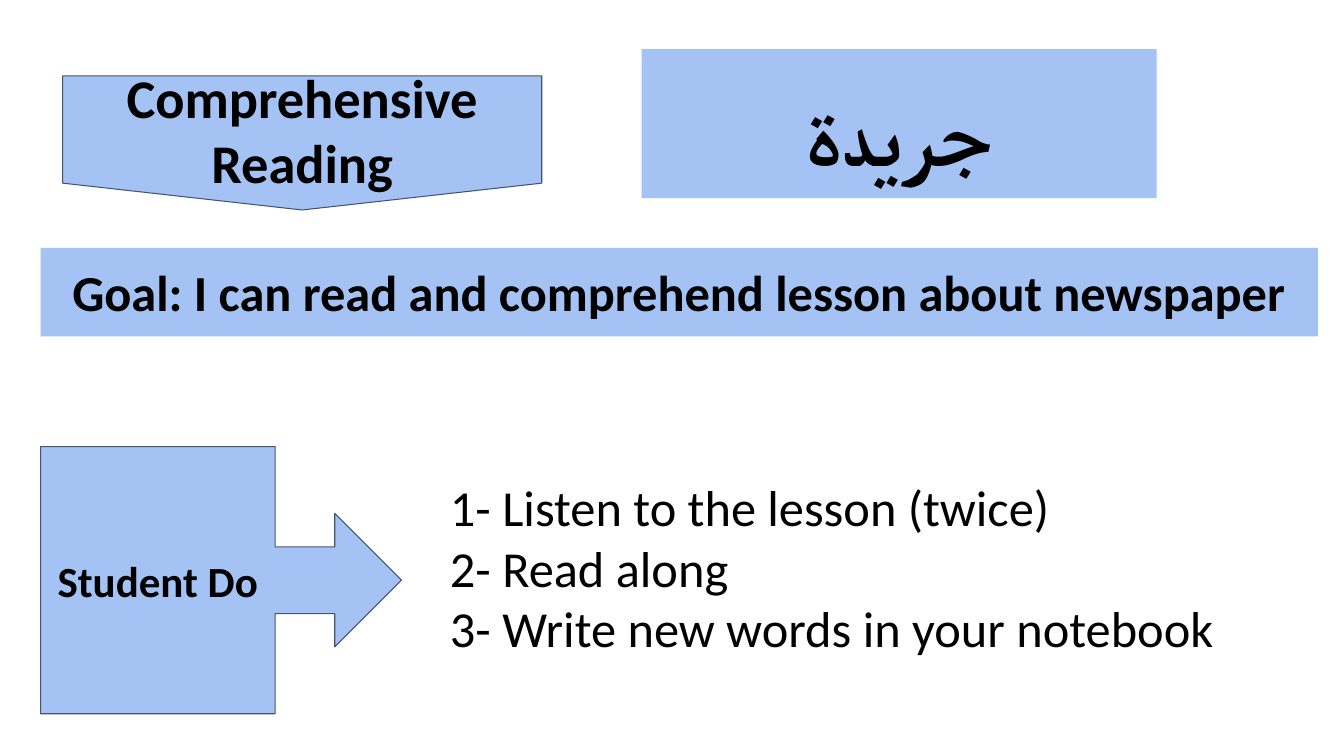
from lxml import etree
from pptx import Presentation
from pptx.dml.color import RGBColor
from pptx.enum import shapes, text
from pptx.oxml.ns import qn
from pptx.util import Pt

COLORS = {"panel": "A4C2F4", "outline": "44546A", "text": "000000"}
FONT = "Calibri"
INSET = 9.6


def color(name):
    return RGBColor.from_string(COLORS[name])


def write_text(shape, lines, size, bold=True, align=text.PP_ALIGN.CENTER,
               anchor=text.MSO_ANCHOR.TOP, grow=False):
    frame = shape.text_frame
    frame.word_wrap = True
    frame.vertical_anchor = anchor
    frame.margin_left = frame.margin_right = Pt(INSET)
    frame.margin_top = frame.margin_bottom = Pt(INSET)
    if grow:
        frame.auto_size = text.MSO_AUTO_SIZE.SHAPE_TO_FIT_TEXT
    frame.text = "\n".join(lines)
    for paragraph in frame.paragraphs:
        paragraph.alignment = align
        font = paragraph.font
        font.name = FONT
        font.size = Pt(size)
        font.bold = bold
        font.color.rgb = color("text")


def set_right_to_left(paragraph):
    properties = paragraph._p.get_or_add_pPr()
    properties.set("rtl", "1")
    defaults = properties.find(qn("a:defRPr"))
    etree.SubElement(defaults, qn("a:cs")).set("typeface", FONT)


def add_panel(slide, kind, box, outlined=False):
    shape = slide.shapes.add_shape(kind, *map(Pt, box))
    shape.shadow.inherit = False
    shape.fill.solid()
    shape.fill.fore_color.rgb = color("panel")
    if outlined:
        shape.line.color.rgb = color("outline")
        shape.line.width = Pt(0.75)
    else:
        shape.line.fill.background()
    return shape


def add_banner(slide, box, words, size):
    banner = add_panel(slide, shapes.MSO_SHAPE.RECTANGLE, box)
    write_text(banner, [words], size, grow=True)
    return banner


def add_label(slide, kind, box, words, size):
    label = add_panel(slide, kind, box, outlined=True)
    write_text(label, [words], size, anchor=text.MSO_ANCHOR.MIDDLE)
    return label


def add_steps(slide, box, steps):
    text_box = slide.shapes.add_textbox(*map(Pt, box))
    lines = [f"{number}- {step}" for number, step in enumerate(steps, 1)]
    write_text(text_box, lines, 36, bold=False, align=text.PP_ALIGN.LEFT, grow=True)


def main():
    presentation = Presentation()
    presentation.slide_width = Pt(960)
    presentation.slide_height = Pt(540)
    slide = presentation.slides.add_slide(presentation.slide_layouts[6])

    # Student steps
    add_steps(slide, (311.8, 330.5, 608.4, 150.5),
              ["Listen to the lesson (twice)", "Read along",
               "Write new words in your notebook"])

    # Goal
    add_banner(slide, (29, 177.1, 912.4, 63.2),
               "Goal: I can read and comprehend lesson about newspaper", 36)

    # Lesson type and Arabic title
    add_label(slide, shapes.MSO_SHAPE.FLOWCHART_OFFPAGE_CONNECTOR,
              (44.8, 54.2, 342.2, 95.8), "Comprehensive Reading", 38.9)
    title = add_banner(slide, (458.4, 35.2, 367.8, 106.4), "جريدة", 62.7)
    title_paragraph = title.text_frame.paragraphs[0]
    title_paragraph.line_spacing = 1.15
    set_right_to_left(title_paragraph)

    # Arrow towards the steps
    callout = add_label(slide, shapes.MSO_SHAPE.RIGHT_ARROW_CALLOUT,
                        (29, 319, 257.8, 190.8), "Student Do", 30.7)
    for index, value in enumerate((0.25, 0.25, 0.25, 0.65)):
        callout.adjustments[index] = value

    presentation.save("out.pptx")


if __name__ == "__main__":
    main()
